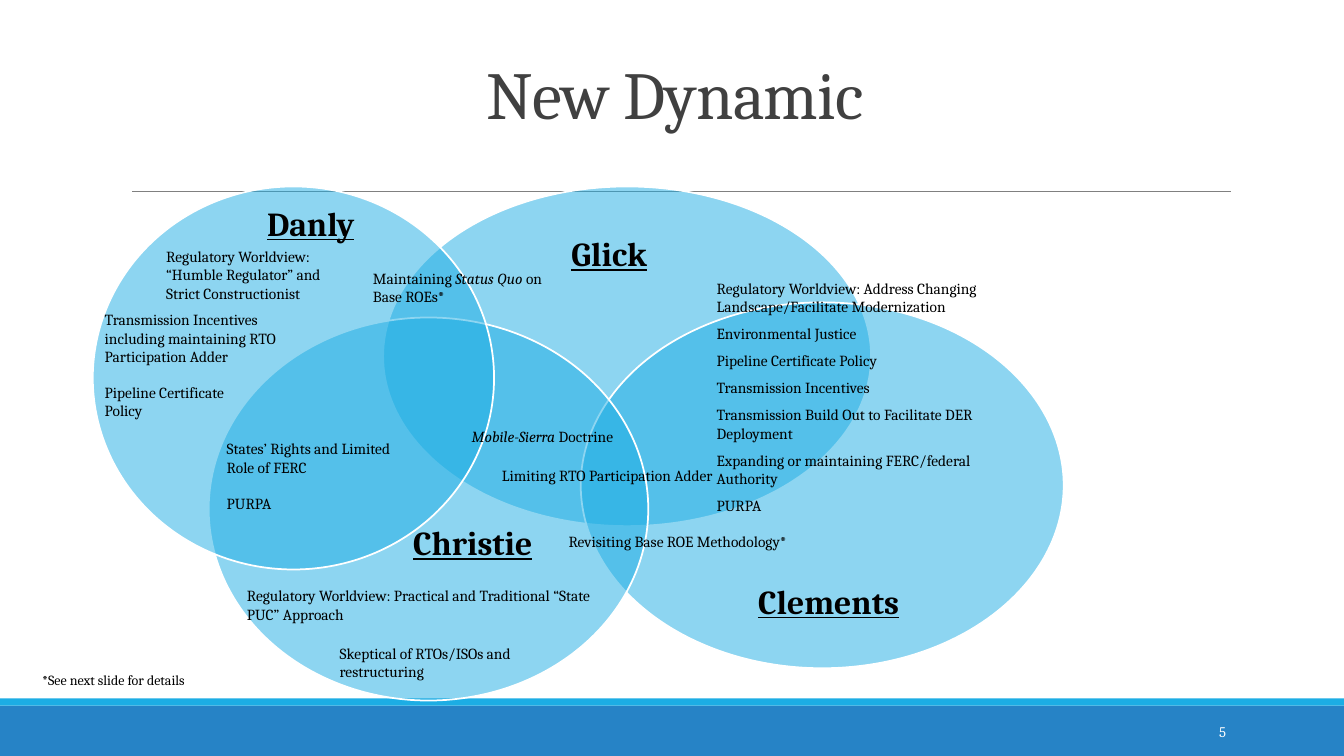
import pptx
import pptx.util
import pptx.dml.color
import pptx.enum.shapes
import pptx.enum.text
import pptx.oxml
import pptx.oxml.ns

Inches = pptx.util.Inches
Pt = pptx.util.Pt
RGBColor = pptx.dml.color.RGBColor
Align = pptx.enum.text.PP_ALIGN
Anchor = pptx.enum.text.MSO_ANCHOR
Shape = pptx.enum.shapes.MSO_SHAPE
qn = pptx.oxml.ns.qn

BLACK = RGBColor(0, 0, 0)
WHITE = RGBColor(255, 255, 255)
DARK = RGBColor(0x40, 0x40, 0x40)
GRAY = RGBColor(0x80, 0x80, 0x80)
BLUE = RGBColor(0x26, 0x83, 0xC6)
CYAN = RGBColor(0x1C, 0xAD, 0xE4)


def sub(parent, tag, **attrs):
    child = pptx.oxml.parse_xml(
        f'<{tag} xmlns:a="http://schemas.openxmlformats.org/drawingml/2006/main"/>')
    for key, value in attrs.items():
        child.set(key, value)
    parent.append(child)


def write(para, text, size=11, color=BLACK, bold=False, line=False, track=None):
    """Add text to a paragraph; parts between asterisk pairs (**) are italic."""
    for i, part in enumerate(text.split("**")):
        if not part:
            continue
        run = para.add_run()
        run.text = part
        font = run.font
        font.name, font.size, font.color.rgb = "Cambria", Pt(size), color
        font.bold, font.underline, font.italic = bold, line, i % 2 == 1
        if track:
            font._element.set("spc", str(track))


class Deck:
    font = {"size": 11, "color": BLACK}

    def __init__(self):
        self.prs = pptx.Presentation()
        self.prs.slide_width, self.prs.slide_height = Inches(13.33), Inches(7.5)
        self.slide = self.prs.slides.add_slide(self.prs.slide_layouts[6])

    def shape(self, kind, box, fill, edge=None, alpha=None):
        item = self.slide.shapes.add_shape(kind, *map(Inches, box))
        item.shadow.inherit = False
        item.fill.solid()
        item.fill.fore_color.rgb = fill
        if alpha:
            color = item._element.spPr.find(qn("a:solidFill"))[0]
            sub(color, "a:alpha", val=str(alpha * 1000))
        if edge:
            item.line.color.rgb, item.line.width = edge, Pt(1.25)
        else:
            item.line.fill.background()

    def rule(self, x1, x2, y):
        item = self.slide.shapes.add_connector(
            pptx.enum.shapes.MSO_CONNECTOR.STRAIGHT,
            Inches(x1), Inches(y), Inches(x2), Inches(y))
        item.line.color.rgb, item.line.width = GRAY, Pt(0.5)
        sub(item._element.spPr, "a:effectLst")

    def text(self, box, *lines, align=Align.LEFT, anchor=Anchor.TOP,
             after=0, before=None, lead=None, **form):
        frame = self.slide.shapes.add_textbox(*map(Inches, box)).text_frame
        frame.word_wrap, frame.vertical_anchor = True, anchor
        for i, line in enumerate(lines):
            para = frame.paragraphs[0] if i == 0 else frame.add_paragraph()
            para.alignment, para.space_after = align, Pt(after)
            if lead:
                para.line_spacing = lead
            if before and i in before:
                para.space_before = Pt(before[i])
            write(para, line, **{**self.font, **form})


def main():
    deck = Deck()

    # Footer bands, rule, title and page number
    deck.shape(Shape.RECTANGLE, (0, 7, 13.33, 0.5), BLUE)
    deck.shape(Shape.RECTANGLE, (0, 6.93, 13.33, 0.07), CYAN)
    deck.rule(1.31, 12.21, 1.9)
    deck.text((1.2, 0.31, 11, 1.06), "New Dynamic", align=Align.CENTER,
              anchor=Anchor.BOTTOM, lead=0.85, size=48, color=DARK, track=-50)
    deck.text((10.83, 7.06, 1.43, 0.4), "5", align=Align.RIGHT,
              anchor=Anchor.MIDDLE, size=10.5, color=WHITE)

    # Overlapping ellipses: Glick, Clements, Christie, Danly
    for box in [(3.8, 1.85, 4.84, 3.37), (5.76, 3, 4.79, 3.63),
                (2.07, 3.15, 4.36, 3.8), (0.92, 1.85, 3.98, 3.8)]:
        deck.shape(Shape.OVAL, box, CYAN, edge=WHITE, alpha=50)

    # Names
    for name, x, y, w in [("Glick", 5.57, 2.26, 2.87), ("Danly", 2.55, 1.96, 1.45),
                          ("Clements", 7.42, 5.71, 1.89),
                          ("Christie", 4, 5.13, 1.89)]:
        deck.text((x, y, w, 0.5), name, size=24, bold=True, line=True)

    # Single views
    for box, view in [
        ((4.88, 4.58, 2.54, 0.47), "Limiting RTO Participation Adder"),
        ((3.6, 2.62, 1.89, 0.47), "Maintaining **Status Quo **on Base ROEs*"),
        ((5.54, 5.23, 2.88, 0.29), "Revisiting Base ROE Methodology*"),
        ((1.55, 2.4, 2.01, 0.66),
         "Regulatory Worldview: “Humble Regulator” and Strict Constructionist"),
        ((2.35, 5.77, 3.69, 0.47),
         "Regulatory Worldview: Practical and Traditional “State PUC” Approach"),
        ((4.58, 4.19, 1.89, 0.29), "**Mobile-Sierra** Doctrine"),
        ((3.27, 6.34, 2.72, 0.47), "Skeptical of RTOs/ISOs and restructuring"),
        ((0.94, 3.75, 1.51, 0.47), "Pipeline Certificate Policy"),
        ((0.94, 3.03, 2.01, 0.66),
         "Transmission Incentives including maintaining RTO Participation Adder"),
    ]:
        deck.text(box, view)

    # Shared views
    deck.text((2.15, 4.31, 2.38, 0.84), "States’ Rights and Limited",
              "Role of FERC", "PURPA", before={2: 13})
    deck.text((7.01, 2.72, 3.2, 2.46),
              "Regulatory Worldview: Address Changing "
              "Landscape/Facilitate Modernization",
              "Environmental Justice", "Pipeline Certificate Policy",
              "Transmission Incentives",
              "Transmission Build Out to Facilitate DER Deployment",
              "Expanding or maintaining FERC/federal Authority",
              "PURPA", after=6)

    # Footnote
    deck.text((0.32, 6.61, 2.91, 0.27), "*See next slide for details", size=10)

    deck.prs.save("out.pptx")


if __name__ == "__main__":
    main()
